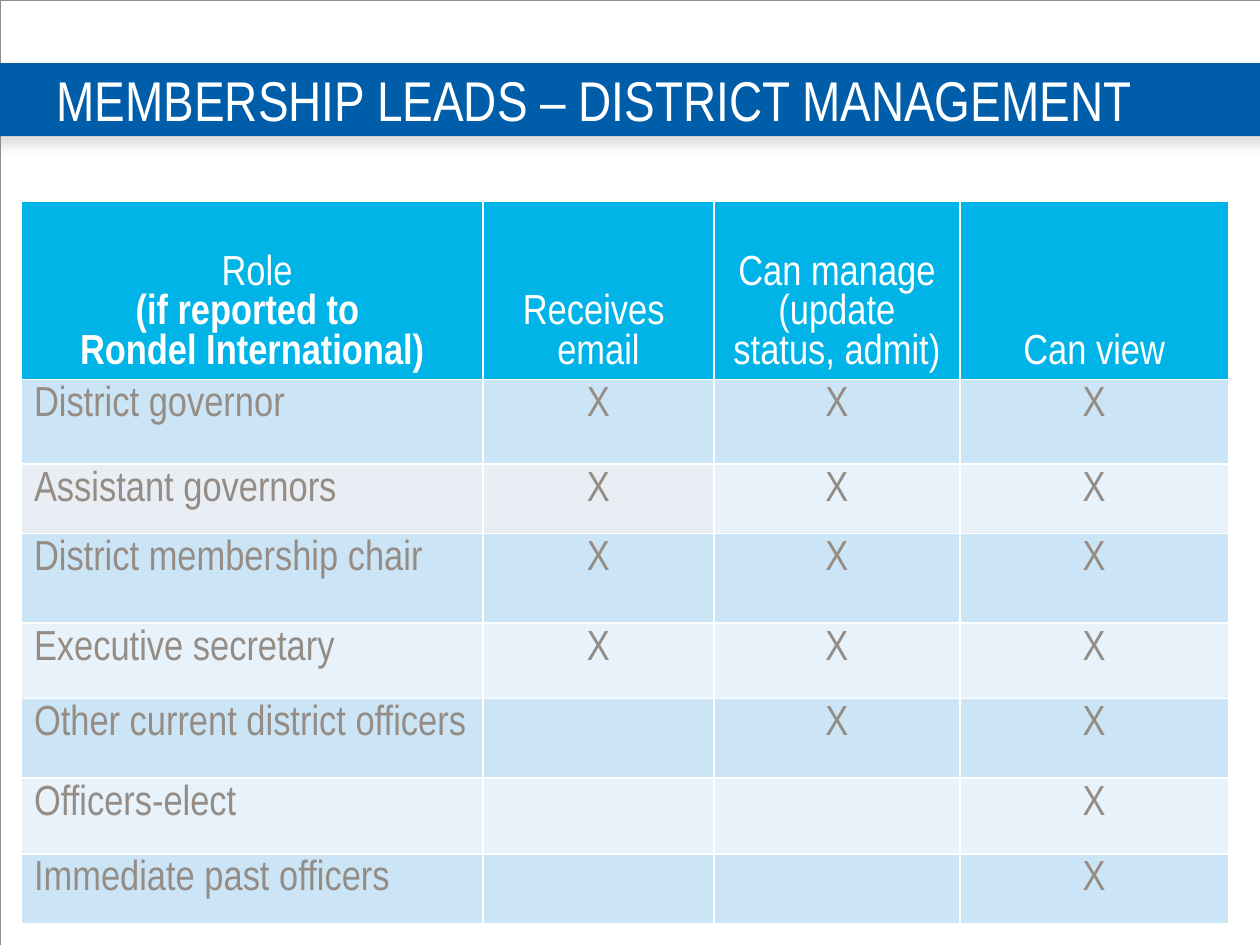
from lxml.etree import SubElement
from pptx import Presentation
from pptx.dml.color import RGBColor
from pptx.enum.shapes import MSO_SHAPE
from pptx.enum.text import MSO_ANCHOR, PP_ALIGN
from pptx.oxml.ns import qn
from pptx.util import Inches, Pt

GRID = Inches(0.1)
COLUMNS, ROWS = 100, 75
FONT = "Arial Narrow"
COLORS = {
    "white": "FFFFFF", "band": "005DAA", "header": "01B4E7", "gray": "958D85",
    "odd": "CCE5F6", "even": "E7F2FA", "pale": "E9EDF4", "shadow": "808080",
}
COLUMN_SHARES = [36.6, 18.3, 19.5, 21.3]
ROW_SHARES = [14.1, 6.7, 5.5, 7.1, 6, 6.3, 6, 5.5]
HEADINGS = [
    [(" Role", False), ("(if reported to \nRondel International)", True)],
    [("Receives \nemail", False)],
    [("Can manage (update status, admit)", False)],
    [("Can view", False)],
]
ROLES = [
    ("District governor", "XXX"),
    ("Assistant governors", "XXX"),
    ("District membership chair", "XXX"),
    ("Executive secretary", "XXX"),
    ("Other current district officers", " XX"),
    ("Officers-elect", "  X"),
    ("Immediate past officers", "  X"),
]


def rgb(name):
    """Return a palette colour."""
    return RGBColor.from_string(COLORS[name])


def place(box):
    """Turn grid columns and rows into slide lengths."""
    return [round(cells * GRID) for cells in box]


def write(paragraph, text, size, color, bold=False):
    """Add text to a paragraph run by run, breaking at newlines."""
    for index, line in enumerate(text.split("\n")):
        if index:
            paragraph.add_line_break()
        run = paragraph.add_run()
        run.text = line
        run.font.name, run.font.size, run.font.bold = FONT, Pt(size), bold
        run.font.color.rgb = rgb(color)


def add_frame(slide, box):
    """Outline the page with a hairline."""
    frame = slide.shapes.add_shape(MSO_SHAPE.RECTANGLE, *place(box))
    frame.shadow.inherit = False
    frame.fill.background()
    frame.line.color.rgb = rgb("gray")
    frame.line.width = Pt(0.13)


def add_soft_shadow(shape):
    """Drop a blurred shadow straight below a shape."""
    shape.shadow.inherit = False
    effects = shape._element.spPr.find(qn("a:effectLst"))
    shadow = SubElement(effects, qn("a:outerShdw"), blurRad=str(Pt(7)),
                        dist=str(Pt(4.8)), dir="5400000", rotWithShape="0")
    color = SubElement(shadow, qn("a:srgbClr"), val=COLORS["shadow"])
    SubElement(color, qn("a:alpha"), val="25000")


def add_title_band(slide, box, title):
    """Draw the title band and its title."""
    left, top, width, height = box
    band = slide.shapes.add_shape(MSO_SHAPE.RECTANGLE, *place(box))
    band.fill.solid()
    band.fill.fore_color.rgb = rgb("band")
    band.line.fill.background()
    add_soft_shadow(band)
    heading = slide.shapes.add_textbox(*place((left + 5.3, top, width - 5.3, height)))
    frame = heading.text_frame
    frame.word_wrap = True
    frame.vertical_anchor = MSO_ANCHOR.MIDDLE
    frame.margin_left = frame.margin_top = frame.margin_right = frame.margin_bottom = 0
    write(frame.paragraphs[0], title, 32, "white")


def style_cell(cell, fill):
    """Give a cell white borders and a fill."""
    properties = cell._tc.get_or_add_tcPr()
    for side in "LRTB":
        border = SubElement(properties, qn(f"a:ln{side}"), w=str(Pt(1)))
        solid = SubElement(border, qn("a:solidFill"))
        SubElement(solid, qn("a:srgbClr"), val=COLORS["white"])
    cell.fill.solid()
    cell.fill.fore_color.rgb = rgb(fill)


def fill_cell(cell, parts, color, align):
    """Write one paragraph for each part of a cell's text."""
    frame = cell.text_frame
    for index, (text, bold) in enumerate(parts):
        paragraph = frame.add_paragraph() if index else frame.paragraphs[0]
        paragraph.alignment = align
        write(paragraph, text, 24, color, bold)


def add_role_table(slide, box):
    """Tabulate which roles receive, manage and view leads."""
    left, top, width, height = box
    table = slide.shapes.add_table(
        len(ROW_SHARES), len(COLUMN_SHARES), *place(box)).table
    for column, share in zip(table.columns, COLUMN_SHARES):
        column.width = round(width * GRID * share / sum(COLUMN_SHARES))
    for row, share in zip(table.rows, ROW_SHARES):
        row.height = round(height * GRID * share / sum(ROW_SHARES))
    for column, parts in enumerate(HEADINGS):
        cell = table.cell(0, column)
        cell.vertical_anchor = MSO_ANCHOR.BOTTOM
        style_cell(cell, "header")
        fill_cell(cell, parts, "white", PP_ALIGN.CENTER)
    for row, (role, marks) in enumerate(ROLES, start=1):
        for column, text in enumerate([role, *marks]):
            cell = table.cell(row, column)
            pale = row == 2 and column < 2
            style_cell(cell, "pale" if pale else "odd" if row % 2 else "even")
            if text.strip():
                align = PP_ALIGN.CENTER if column else PP_ALIGN.LEFT
                fill_cell(cell, [(text, False)], "gray", align)


def main():
    """Build and save the slide."""
    deck = Presentation()
    deck.slide_width, deck.slide_height = COLUMNS * GRID, ROWS * GRID
    slide = deck.slides.add_slide(deck.slide_layouts[6])
    slide.background.fill.solid()
    slide.background.fill.fore_color.rgb = rgb("white")
    add_frame(slide, (0, 0, COLUMNS, ROWS))
    add_title_band(slide, (-0.8, 5, 101.7, 5.8), "MEMBERSHIP LEADS – DISTRICT MANAGEMENT")
    add_role_table(slide, (1.7, 16, 95.8, 57.3))
    deck.save("out.pptx")


if __name__ == "__main__":
    main()
